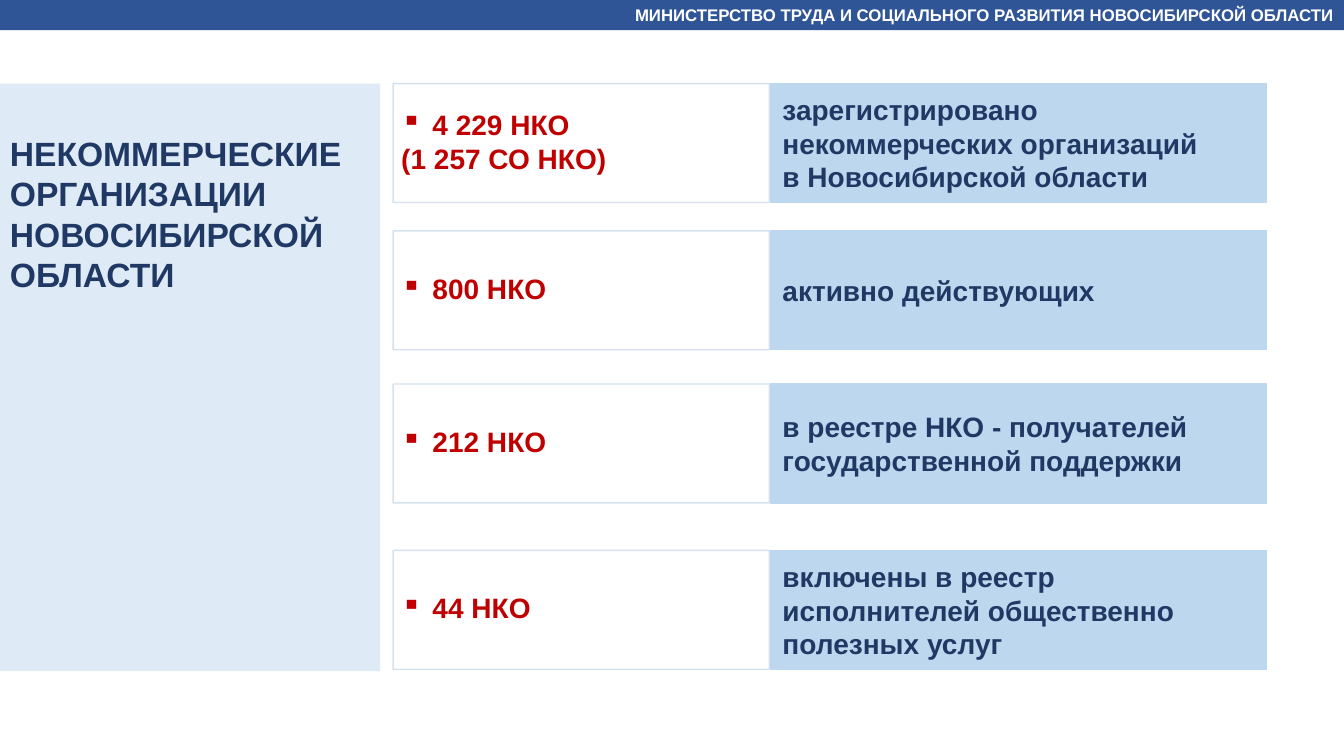
"""Build a slide on the non-profit organisations of the Novosibirsk region."""
import pptx
import pptx.dml.color
import pptx.enum.shapes
import pptx.enum.text
import pptx.oxml
import pptx.oxml.ns
import pptx.util

Inches = pptx.util.Inches
Pt = pptx.util.Pt
ALIGN = pptx.enum.text.PP_ALIGN
ANCHOR = pptx.enum.text.MSO_ANCHOR


def paint(color_owner, color):
    if hasattr(color_owner, "solid"):
        color_owner.solid()
        color_owner = color_owner.fore_color
    else:
        color_owner = color_owner.color
    color_owner.rgb = pptx.dml.color.RGBColor.from_string(color)


def add_box(left, top, width, height, fill, line=None, lines=(), size=20, color="203864",
            insets=(0.1, 0.1), anchor=ANCHOR.TOP):
    shape = slide.shapes.add_shape(
        pptx.enum.shapes.MSO_SHAPE.RECTANGLE,
        Inches(left), Inches(top), Inches(width), Inches(height))
    shape.shadow.inherit = False
    if fill:
        paint(shape.fill, fill)
    else:
        shape.fill.background()
    if line:
        paint(shape.line, line)
        shape.line.width = Pt(1)
    else:
        shape.line.fill.background()
    frame = shape.text_frame
    frame.word_wrap = True
    frame.vertical_anchor = anchor
    frame.margin_left, frame.margin_right = map(Inches, insets)
    frame.text = "\n".join(lines)
    for paragraph in frame.paragraphs:
        paragraph.alignment = ALIGN.LEFT
        for run in paragraph.runs:
            run.font.name = "Arial"
            run.font.size = Pt(size)
            run.font.bold = True
            paint(run.font, color)
    return shape


presentation = pptx.Presentation()
presentation.slide_width = Inches(13.33)
presentation.slide_height = Inches(7.5)
slide = presentation.slides.add_slide(presentation.slide_layouts[6])

header = add_box(0, 0, 13.33, 0.3, "2F5597", size=12, color="FFFFFF", lines=[
    "МИНИСТЕРСТВО ТРУДА И СОЦИАЛЬНОГО РАЗВИТИЯ НОВОСИБИРСКОЙ ОБЛАСТИ"])
header.text_frame.paragraphs[0].alignment = ALIGN.RIGHT

add_box(0, 0.83, 3.77, 5.83, "DEEBF7")
add_box(0, 1.27, 3.77, 1.72, None, size=24, lines=[
    "НЕКОММЕРЧЕСКИЕ ОРГАНИЗАЦИИ НОВОСИБИРСКОЙ ОБЛАСТИ"])

rows = [
    (0.83, ["4 229 НКО", "(1 257 СО НКО)"],
     ["зарегистрировано некоммерческих организаций", "в Новосибирской области"]),
    (2.29, ["800 НКО"], ["активно действующих"]),
    (3.81, ["212 НКО"], ["в реестре НКО - получателей", "государственной поддержки"]),
    (5.46, ["44 НКО"], ["включены в реестр исполнителей общественно полезных услуг"]),
]
for top, count, description in rows:
    count_box = add_box(3.9, top, 3.73, 1.18, "FFFFFF", "D2DEEF", count, color="C00000",
                        insets=(0.08, 0.14), anchor=ANCHOR.MIDDLE)
    for solid_fill in count_box.fill, count_box.line.fill:
        color_element = solid_fill.fore_color._color._xClr
        alpha = pptx.oxml.parse_xml(
            f'<a:alpha {pptx.oxml.ns.nsdecls("a")} val="90000"/>')
        color_element.append(alpha)
    for paragraph in count_box.text_frame.paragraphs:
        paragraph.line_spacing = 0.9
        paragraph.space_after = Pt(3)
    properties = count_box.text_frame.paragraphs[0]._p.get_or_add_pPr()
    properties.set("marL", str(Inches(0.31)))
    properties.set("indent", str(Inches(-0.31)))
    properties.append(pptx.oxml.parse_xml(
        f'<a:buChar {pptx.oxml.ns.nsdecls("a")} char="▪"/>'))

    add_box(7.64, top, 4.92, 1.18, "BDD7EE", "BDD7EE", description,
            insets=(0.12, 0.12), anchor=ANCHOR.MIDDLE)

presentation.save("out.pptx")
